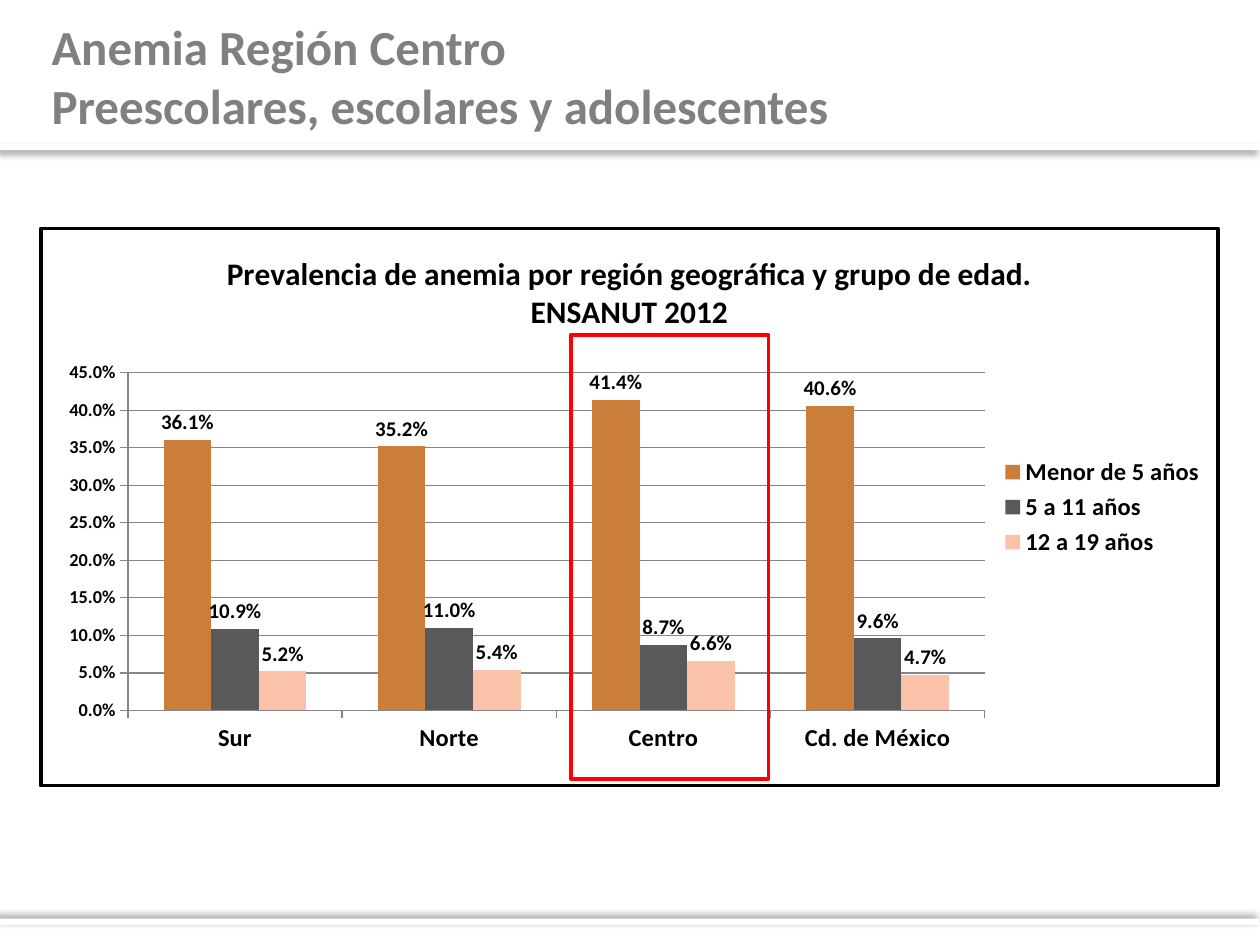
from pptx import Presentation
from pptx.chart.data import CategoryChartData
from pptx.dml.color import RGBColor
from pptx.enum.chart import (XL_CHART_TYPE as ChartType, XL_LABEL_POSITION as LabelPosition,
                             XL_LEGEND_POSITION as LegendPosition, XL_TICK_MARK as TickMark)
from pptx.enum.shapes import MSO_SHAPE as Shape
from pptx.enum.text import MSO_ANCHOR as Anchor, PP_ALIGN as Align
from pptx.oxml import parse_xml
from pptx.oxml.ns import nsdecls, qn
from pptx.util import Inches, Pt

TITLE = "Anemia Región Centro\vPreescolares, escolares y adolescentes"
CHART_TITLE = "Prevalencia de anemia por región geográfica y grupo de edad. ENSANUT 2012"
REGIONS = ["Sur", "Norte", "Centro", "Cd. de México"]
AGE_GROUPS = [
    ("Menor de 5 años", "under_five", (0.361, 0.352, 0.414, 0.406)),
    ("5 a 11 años", "school_age", (0.109, 0.11, 0.087, 0.096)),
    ("12 a 19 años", "teenage", (0.052, 0.054, 0.066, 0.047)),
]
BANDS = [(0, 1.14, 0, 135), (-0.01, 7.29, 180, 225)]
PLOT_AREA = {"x": 0.074, "y": 0.259, "w": 0.728, "h": 0.606}
PERCENT = "0.0%"

THEME = {
    "font": "Calibri",
    "colors": {"white": "FFFFFF", "text": "000000", "title": "808080", "grid": "868686",
               "highlight": "FF0000", "under_five": "CB7D3A", "school_age": "595959",
               "teenage": "FAC3A9"},
    "sizes": {"title": 28, "chart": 10, "chart_title": 18, "category": 14,
              "value": 10.5, "legend": 14, "label": 12},
}


def color(name):
    return RGBColor.from_string(THEME["colors"][name])


def style_font(font, size, tint="text", bold=True):
    font.name = THEME["font"]
    font.size = Pt(THEME["sizes"][size])
    font.bold = bold
    font.color.rgb = color(tint)


def add_band(slide, left, top, rotation, direction):
    band = slide.shapes.add_shape(Shape.RECTANGLE, Inches(left), Inches(top),
                                  Inches(10), Inches(0.05))
    band.rotation = rotation
    band.fill.solid()
    band.fill.fore_color.rgb = color("white")
    band.line.fill.background()
    band.element.spPr.append(parse_xml(
        f'<a:effectLst {nsdecls("a")}><a:outerShdw blurRad="{Pt(4)}" dist="{Pt(3)}" '
        f'dir="{direction * 60000}" algn="ctr" rotWithShape="0">'
        f'<a:srgbClr val="{THEME["colors"]["text"]}"><a:alpha val="40000"/></a:srgbClr>'
        '</a:outerShdw></a:effectLst>'))


def set_title(slide):
    title = slide.shapes.title
    title.left, title.top = Inches(0.31), Inches(0.08)
    title.width, title.height = Inches(9), Inches(0.87)
    frame = title.text_frame
    frame.text = TITLE
    frame.word_wrap = True
    frame.vertical_anchor = Anchor.TOP
    para = frame.paragraphs[0]
    para.alignment = Align.LEFT
    for span in para.runs:
        style_font(span.font, "title", "title")


def frame_chart(chart):
    colors = THEME["colors"]
    border = parse_xml(
        f'<c:spPr {nsdecls("c", "a")}><a:solidFill><a:srgbClr val="{colors["white"]}"/></a:solidFill>'
        f'<a:ln w="{Pt(2)}"><a:solidFill><a:srgbClr val="{colors["text"]}"/></a:solidFill></a:ln></c:spPr>')
    chart.element.find(qn("c:txPr")).addprevious(border)


def place_plot(chart):
    plot_area = chart.element.find(qn("c:chart")).find(qn("c:plotArea"))
    for old in plot_area.findall(qn("c:layout")):
        plot_area.remove(old)
    modes = "".join(f'<c:{side}Mode val="edge"/>' for side in "xy")
    places = "".join(f'<c:{side} val="{share}"/>' for side, share in PLOT_AREA.items())
    plot_area.insert(0, parse_xml(
        f'<c:layout {nsdecls("c")}><c:manualLayout><c:layoutTarget val="inner"/>'
        f'{modes}{places}</c:manualLayout></c:layout>'))


def add_anemia_chart(slide):
    chart_data = CategoryChartData(number_format=PERCENT)
    chart_data.categories = REGIONS
    for name, _, values in AGE_GROUPS:
        chart_data.add_series(name, values)
    chart = slide.shapes.add_chart(ChartType.COLUMN_CLUSTERED, Inches(0.31), Inches(1.8),
                                   Inches(9.37), Inches(4.45), chart_data).chart
    style_font(chart.font, "chart", bold=False)
    frame_chart(chart)
    place_plot(chart)

    chart.has_title = True
    chart.chart_title.include_in_layout = False
    heading = chart.chart_title.text_frame
    heading.text = CHART_TITLE
    style_font(heading.paragraphs[0].runs[0].font, "chart_title")

    chart.has_legend = True
    chart.legend.position = LegendPosition.RIGHT
    chart.legend.include_in_layout = False
    style_font(chart.legend.font, "legend")

    for axis, size in ((chart.category_axis, "category"), (chart.value_axis, "value")):
        style_font(axis.tick_labels.font, size)
        axis.major_tick_mark = TickMark.OUTSIDE
        axis.format.line.color.rgb = color("grid")
    value_axis = chart.value_axis
    value_axis.minimum_scale, value_axis.maximum_scale = 0, 0.45
    value_axis.major_unit = 0.05
    value_axis.has_major_gridlines = True
    value_axis.major_gridlines.format.line.color.rgb = color("grid")
    value_axis.tick_labels.number_format = PERCENT
    value_axis.tick_labels.number_format_is_linked = False

    plot = chart.plots[0]
    plot.gap_width, plot.overlap = 150, 0
    plot.vary_by_categories = False
    for series, (_, tint, _) in zip(plot.series, AGE_GROUPS):
        series.format.fill.solid()
        series.format.fill.fore_color.rgb = color(tint)
        labels = series.data_labels
        labels.show_value = True
        labels.position = LabelPosition.OUTSIDE_END
        labels.number_format = PERCENT
        labels.number_format_is_linked = False
        style_font(labels.font, "label")


def add_highlight(slide):
    box = slide.shapes.add_shape(Shape.RECTANGLE, Inches(4.53), Inches(2.66),
                                 Inches(1.57), Inches(3.52))
    box.shadow.inherit = False
    box.fill.background()
    box.line.color.rgb = color("highlight")
    box.line.width = Pt(2.25)


def main():
    deck = Presentation()
    deck.slide_width, deck.slide_height = Inches(10), Inches(7.5)
    page = deck.slides.add_slide(deck.slide_layouts[5])
    for band in BANDS:
        add_band(page, *band)
    set_title(page)
    add_anemia_chart(page)
    add_highlight(page)
    deck.save("out.pptx")


if __name__ == "__main__":
    main()
